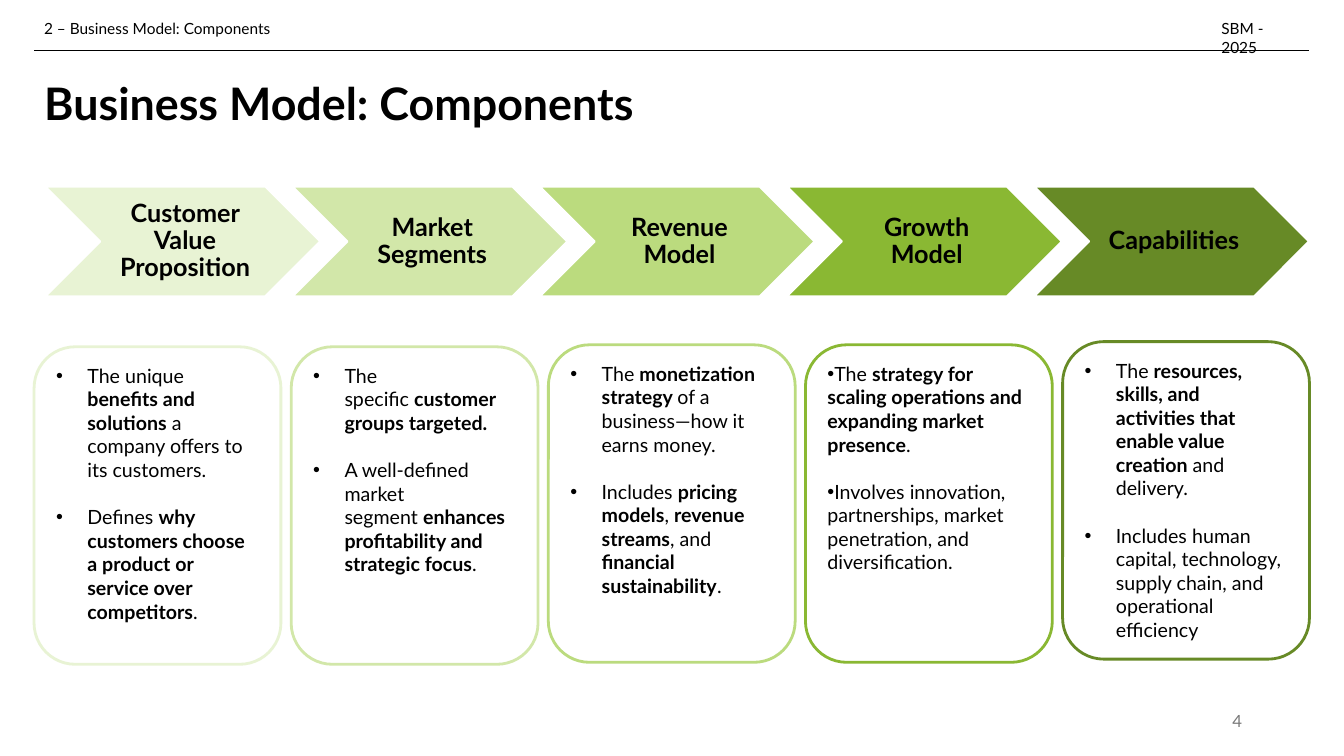
from lxml import etree
from pptx import Presentation
from pptx import util as u
from pptx.dml.color import RGBColor
from pptx.enum import shapes, text
from pptx.oxml import ns

FONT = "Lato"
BLACK = RGBColor(0x00, 0x00, 0x00)
WHITE = RGBColor(0xFF, 0xFF, 0xFF)
GREY = RGBColor(0x79, 0x79, 0x79)
GREENS = [
    RGBColor(0xE8, 0xF3, 0xD4),
    RGBColor(0xD2, 0xE7, 0xA9),
    RGBColor(0xBB, 0xDB, 0x7E),
    RGBColor(0x8A, 0xB8, 0x33),
    RGBColor(0x67, 0x8A, 0x26),
]
COMPONENTS = ["Customer Value Proposition", "Market Segments", "Revenue Model",
              "Growth Model", "Capabilities"]
BOLD_MARK, FIXED_SPACE_MARK = "*", "~"
CARDS = [
    (8.74, 0.79, ["The unique *benefits and solutions*~a company offers to its customers.",
                  "Defines~*why customers choose a product or service over competitors*."]),
    (8.74, 0.79, ["The specific~*customer groups targeted.*",
                  "A well-defined market segment~*enhances profitability and strategic focus*."]),
    (8.69, 0.79, ["The~*monetization strategy~*of a business—how it earns money.",
                  "Includes~*pricing models*, *revenue streams*, and *financial sustainability*."]),
    (8.69, 0, ["The~*strategy for scaling operations and expanding market presence*.",
               "Involves~innovation, partnerships, market penetration, and diversification."]),
    (8.61, 0.79, ["The~*resources, skills, and activities~that enable value creation *and delivery.",
                  "Includes~human capital, technology, supply chain, and operational efficiency"]),
]


def style_runs(paragraph, size, color=BLACK, bold=False):
    """Format every run of a paragraph."""
    for run in paragraph.runs:
        run.font.name = FONT
        run.font.size = u.Pt(size)
        run.font.bold = bold
        run.font.color.rgb = color


def add_label(slide, wording, left, top, width, height, size, color=BLACK):
    """Add a wrapped one-paragraph text box and return its text frame."""
    frame = slide.shapes.add_textbox(u.Cm(left), u.Cm(top), u.Cm(width), u.Cm(height)).text_frame
    frame.word_wrap = True
    frame.text = wording
    style_runs(frame.paragraphs[0], size, color)
    return frame


def add_header(slide, left, top, width):
    """Place the section name, course name and rule across the top."""
    add_label(slide, "2 – Business Model: Components", left, top, 8.18, 0.74, 11)
    add_label(slide, "SBM - 2025", left + width - 2.46, top, 2.46, 0.74, 11)
    rule_top = u.Cm(top + 0.91)
    rule = slide.shapes.add_connector(shapes.MSO_CONNECTOR.STRAIGHT, u.Cm(left), rule_top,
                                      u.Cm(left + width), rule_top)
    rule.line.color.rgb = BLACK
    rule.line.width = u.Pt(0.25)
    etree.SubElement(rule._element.spPr, ns.qn("a:effectLst"))


def add_title(slide, left, top, width, height):
    """Move and format the title placeholder."""
    title = slide.shapes.title
    title.left, title.top, title.width, title.height = map(u.Cm, (left, top, width, height))
    frame = title.text_frame
    frame.text = "Business Model: Components"
    frame.auto_size = text.MSO_AUTO_SIZE.NONE
    frame.vertical_anchor = text.MSO_ANCHOR.MIDDLE
    paragraph = frame.paragraphs[0]
    paragraph.alignment = text.PP_ALIGN.LEFT
    paragraph.line_spacing = 0.9
    style_runs(paragraph, 32, bold=True)


def add_panel(slide, kind, box, fill, line, line_width):
    """Add a filled, outlined preset shape without a shadow."""
    panel = slide.shapes.add_shape(kind, *map(u.Cm, box))
    panel.shadow.inherit = False
    panel.fill.solid()
    panel.fill.fore_color.rgb = fill
    panel.line.color.rgb = line
    panel.line.width = u.Pt(line_width)
    panel.text_frame.word_wrap = True
    return panel


def add_chevrons(slide, left, top, width, height, pitch):
    """Place the row of component chevrons."""
    for index, (name, green) in enumerate(zip(COMPONENTS, GREENS)):
        box = (left + index * pitch, top, width, height)
        frame = add_panel(slide, shapes.MSO_SHAPE.CHEVRON, box, green, WHITE, 1.5).text_frame
        frame.text = name
        frame.vertical_anchor = text.MSO_ANCHOR.MIDDLE
        frame.margin_left = u.Cm(0.2)
        frame.margin_right = frame.margin_top = frame.margin_bottom = u.Cm(0.08)
        paragraph = frame.paragraphs[0]
        paragraph.alignment = text.PP_ALIGN.CENTER
        paragraph.line_spacing = 0.9
        style_runs(paragraph, 18, bold=True)


def fill_bullet(paragraph, wording, indent):
    """Write one bulleted paragraph whose marked parts are bold."""
    properties = paragraph._p.get_or_add_pPr()
    properties.set("marL", str(u.Cm(indent)))
    properties.set("indent", str(-u.Cm(indent)))
    etree.SubElement(properties, ns.qn("a:buFont"), typeface="Arial")
    etree.SubElement(properties, ns.qn("a:buChar"), char="•")
    paragraph.alignment = text.PP_ALIGN.LEFT
    for index, part in enumerate(wording.replace(FIXED_SPACE_MARK, chr(160)).split(BOLD_MARK)):
        if part:
            run = paragraph.add_run()
            run.text = part
            run.font.name = FONT
            run.font.size = u.Pt(14)
            run.font.bold = index % 2 == 1
            run.font.color.rgb = BLACK


def add_cards(slide, left, width, height, pitch):
    """Place the row of rounded description cards."""
    for index, ((top, indent, points), green) in enumerate(zip(CARDS, GREENS)):
        box = (left + index * pitch, top, width, height)
        card = add_panel(slide, shapes.MSO_SHAPE.ROUNDED_RECTANGLE, box, WHITE, green, 2)
        frame = card.text_frame
        frame.vertical_anchor = text.MSO_ANCHOR.TOP
        for number, wording in enumerate(points):
            paragraph = frame.add_paragraph() if number else frame.paragraphs[0]
            fill_bullet(paragraph, wording, indent)
            if number:
                paragraph.space_before = u.Pt(17)


def add_page_number(slide, left, top, width, height):
    """Place the page number at the lower right."""
    frame = add_label(slide, "4", left, top, width, height, 12, GREY)
    frame.vertical_anchor = text.MSO_ANCHOR.MIDDLE
    frame.paragraphs[0].alignment = text.PP_ALIGN.RIGHT


def main():
    """Build and save the slide."""
    presentation = Presentation()
    presentation.slide_width = u.Cm(33.87)
    presentation.slide_height = u.Cm(19.05)
    slide = presentation.slides.add_slide(presentation.slide_layouts[5])
    add_title(slide, 0.86, 1.27, 29.21, 2.82)
    add_header(slide, 0.86, 0.36, 32.13)
    add_chevrons(slide, 1.14, 4.7, 6.93, 2.77, 6.23)
    add_cards(slide, 0.86, 6.22, 8, 6.48)
    add_page_number(slide, 23.93, 17.65, 7.62, 1.02)
    presentation.save("out.pptx")


if __name__ == "__main__":
    main()
